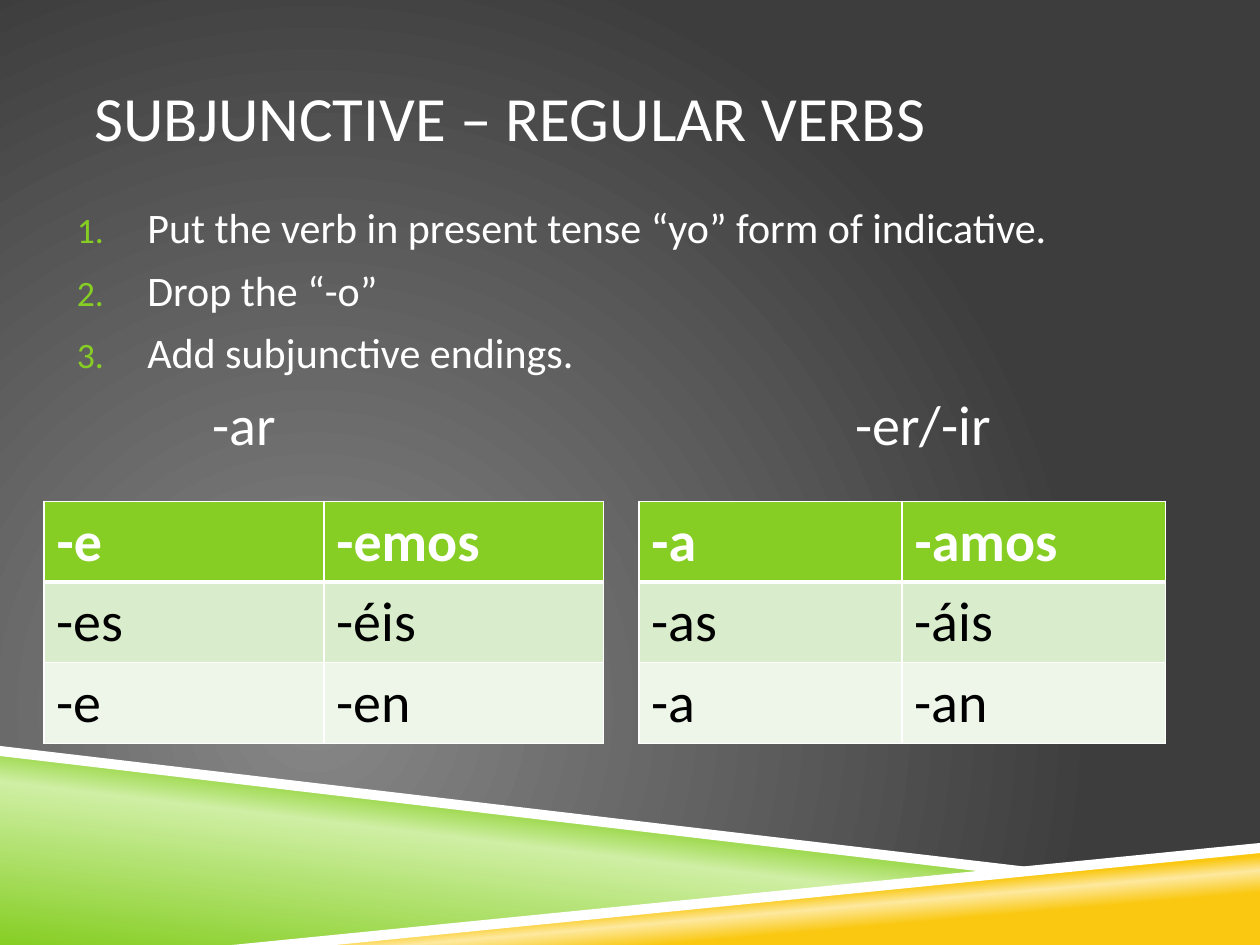
from pptx import Presentation, util as u
from pptx.dml.color import RGBColor
from pptx.enum import text
from pptx.oxml import parse_xml
from pptx.oxml.ns import nsdecls, qn

THEME = dict(
    font="Calibri", white="FFFFFF", black="000000", green="86CE24",
    bands=["86CE24", "D9EDCD", "EDF6E8"],
    title=36, body=24, ending=32,
)
WHITE = RGBColor.from_string(THEME["white"])


def add_run(p, words, size, color=THEME["white"], bold=False):
    r = p.add_run()
    r.text = words
    r.font.name, r.font.size, r.font.bold = THEME["font"], u.Pt(size), bold
    r.font.color.rgb = RGBColor.from_string(color)


def set_gradient(fill, owner, stops, shade):
    """Give a fill any number of stops and a linear or path shade."""
    fill.solid()
    solid = owner.find(".//" + qn("a:solidFill"))
    gs = "".join(f'<a:gs pos="{pos * 1000}"><a:srgbClr val="{c}"/></a:gs>' for pos, c in stops)
    solid.getparent().replace(solid, parse_xml(
        f'<a:gradFill {nsdecls("a")} rotWithShape="1"><a:gsLst>{gs}</a:gsLst>{shade}</a:gradFill>'))


prs = Presentation()
prs.slide_width, prs.slide_height = u.Inches(10), u.Inches(7.5)
s = prs.slides.add_slide(prs.slide_layouts[5])

# Background: a glow centred in the lower left
set_gradient(s.background.fill, s._element, [(0, "878787"), (100, "3D3D3D")],
             '<a:path path="circle"><a:fillToRect l="50000" t="100000" r="100000" b="50000"/></a:path>')

# Slanted wedges and their white edges, in inches
wedges = [
    ([(0, 5.97), (7.92, 6.92), (2, 7.5), (0, 7.5)],
     [(0, "86CE24"), (52, "CFEFA4"), (66, "86CE24")], 277),
    ([(1.98, 7.5), (10, 6.72), (10, 7.5)],
     [(28, "FAC810"), (40, "FDE99F"), (48, "FAC810")], 265),
    ([(0, 5.92), (0, 6), (7.9, 6.93), (8.32, 6.9)], None, None),
    ([(10, 6.69), (1.84, 7.5), (2.66, 7.5), (10, 6.77)], None, None),
]
for points, stops, angle in wedges:
    start, *rest = [(u.Inches(x), u.Inches(y)) for x, y in points]
    builder = s.shapes.build_freeform(*start)
    builder.add_line_segments(rest, close=True)
    sp = builder.convert_to_shape()
    sp.shadow.inherit = False
    sp.line.fill.background()
    if stops:
        set_gradient(sp.fill, sp._element.spPr, stops, f'<a:lin ang="{angle * 60000}" scaled="0"/>')
    else:
        sp.fill.solid()
        sp.fill.fore_color.rgb = WHITE

# Title
title = s.shapes.title
title.left, title.top, title.width, title.height = map(u.Inches, (0.75, 0.3, 8.5, 1.25))
tf = title.text_frame
tf.margin_left = tf.margin_right = 0
tf.vertical_anchor = text.MSO_ANCHOR.MIDDLE
tf.auto_size = text.MSO_AUTO_SIZE.NONE
p = tf.paragraphs[0]
p.alignment = text.PP_ALIGN.LEFT
add_run(p, "SUBJUNCTIVE – REGULAR VERBS", THEME["title"])

# Numbered steps, then the two table headings on one tabbed line
tf = s.shapes.add_textbox(*map(u.Inches, (0.61, 1.55, 8.5, 2.3))).text_frame
tf.word_wrap = True
tf.margin_left = tf.margin_right = 0
steps = ["Put the verb in present tense “yo” form of indicative.",
         "Drop the “-o”", "Add subjunctive endings."]
numbering = [
    f'<a:buClr {nsdecls("a")}><a:srgbClr val="{THEME["green"]}"/></a:buClr>',
    f'<a:buSzPct {nsdecls("a")} val="85000"/>',
    f'<a:buFont {nsdecls("a")} typeface="{THEME["font"]}"/>',
    f'<a:buAutoNum {nsdecls("a")} type="arabicPeriod"/>',
]
for i, step in enumerate(steps):
    p = tf.paragraphs[0] if i == 0 else tf.add_paragraph()
    pPr = p._p.get_or_add_pPr()
    pPr.set("marL", str(u.Inches(0.56)))
    pPr.set("indent", str(-u.Inches(0.56)))
    for xml in numbering:
        pPr.append(parse_xml(xml))
    p.space_before = u.Pt(7 if i else 0)
    add_run(p, step, THEME["body"])

p = tf.add_paragraph()
pPr = p._p.get_or_add_pPr()
pPr.set("marL", str(u.Inches(1.08)))
pPr.append(parse_xml(
    f'<a:tabLst {nsdecls("a")}><a:tab pos="{u.Inches(5.1)}" algn="l"/></a:tabLst>'))
p.space_before = u.Pt(7)
add_run(p, "-ar\t-er/-ir", THEME["ending"])

# Ending tables: left, column width, rows
tables = [
    (5.07, 2.09, [("-a", "-amos"), ("-as", "-áis"), ("-a", "-an")]),
    (0.35, 2.22, [("-e", "-emos"), ("-es", "-éis"), ("-e", "-en")]),
]
ROW = 0.64
for left, col, rows in tables:
    table = s.shapes.add_table(3, 2, *map(u.Inches, (left, 3.98, 2 * col, 3 * ROW))).table
    for column in table.columns:
        column.width = u.Inches(col)
    for r, endings in enumerate(rows):
        for c, ending in enumerate(endings):
            cell = table.cell(r, c)
            cell.fill.solid()
            cell.fill.fore_color.rgb = RGBColor.from_string(THEME["bands"][r])
            add_run(cell.text_frame.paragraphs[0], ending, THEME["ending"],
                    THEME["black"] if r else THEME["white"], bold=r == 0)
            widths = {"L": 1, "R": 1, "T": 3 if r == 1 else 1, "B": 3 if r == 0 else 1}
            for i, (side, width) in enumerate(widths.items()):
                cell._tc.get_or_add_tcPr().insert(i, parse_xml(
                    f'<a:ln{side} {nsdecls("a")} w="{u.Pt(width)}"><a:solidFill>'
                    f'<a:srgbClr val="{THEME["white"]}"/></a:solidFill></a:ln{side}>'))

prs.save("out.pptx")
